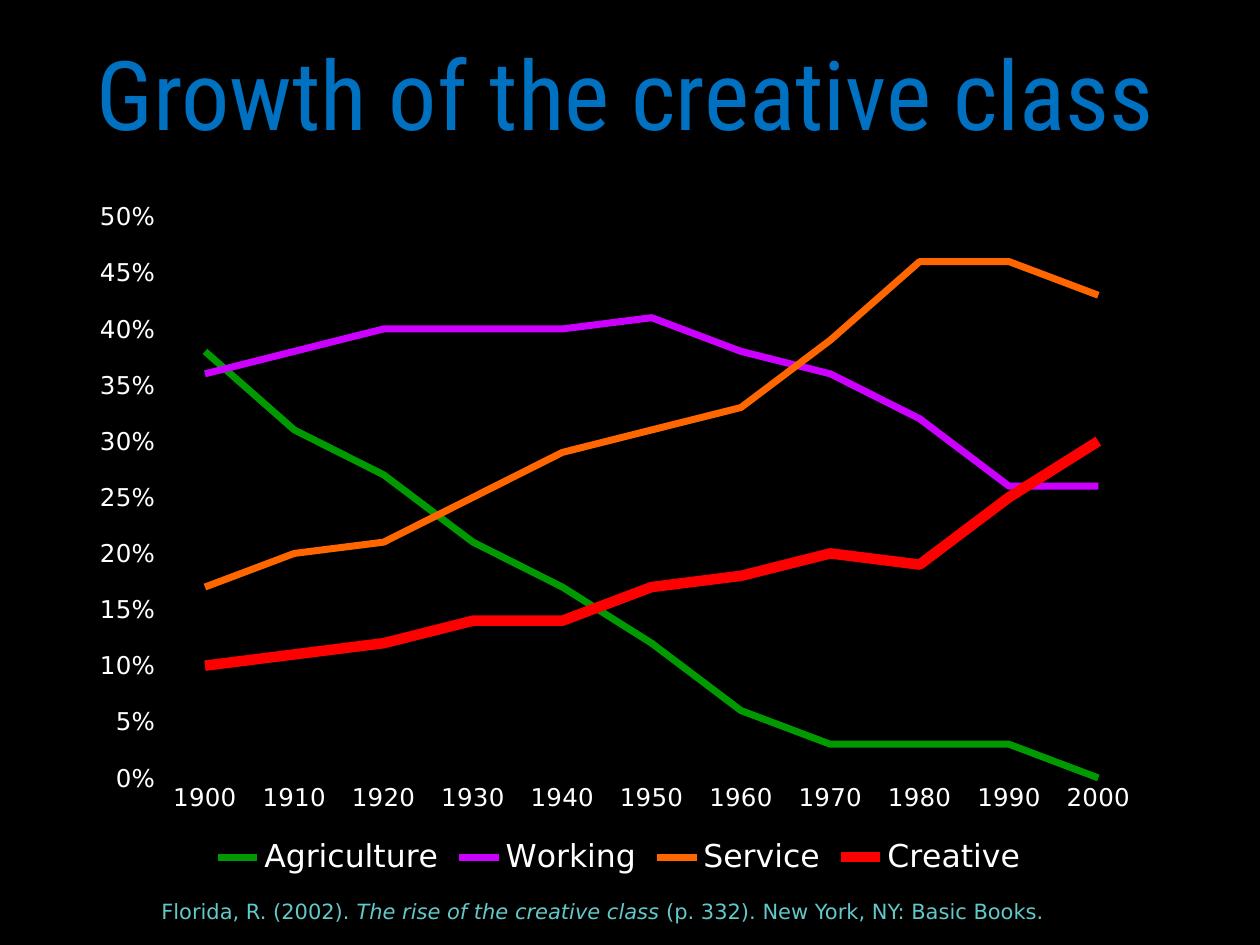
import pptx
import pptx.chart.data
import pptx.dml.color
import pptx.enum.chart
import pptx.enum.text
import pptx.util
from lxml import etree

px = 914400 / 126
enum = pptx.enum.chart


def rgb(code):
    return pptx.dml.color.RGBColor.from_string(code)


def label(box, parts, face, size, color):
    """Add an unwrapped line of text; every second part is italic."""
    shape = slide.shapes.add_textbox(*[round(n * px) for n in box])
    frame = shape.text_frame
    frame.word_wrap = False
    frame.auto_size = pptx.enum.text.MSO_AUTO_SIZE.SHAPE_TO_FIT_TEXT
    para = frame.paragraphs[0]
    for i, part in enumerate(parts):
        run = para.add_run()
        run.text = part
        run.font.name = face
        run.font.size = pptx.util.Pt(size)
        run.font.italic = i % 2 == 1
        run.font.color.rgb = rgb(color)


deck = pptx.Presentation()
deck.slide_width = round(1260 * px)
deck.slide_height = round(945 * px)
slide = deck.slides.add_slide(deck.slide_layouts[6])
slide.background.fill.solid()
slide.background.fill.fore_color.rgb = rgb("000000")

# Share of the workforce in each class: color, line width, values
groups = {
    "Agriculture": ("009900", 4, [0.38, 0.31, 0.27, 0.21, 0.17, 0.12, 0.06, 0.03, 0.03, 0.03, 0]),
    "Working": ("CC00FF", 4, [0.36, 0.38, 0.4, 0.4, 0.4, 0.41, 0.38, 0.36, 0.32, 0.26, 0.26]),
    "Service": ("FF6600", 4, [0.17, 0.2, 0.21, 0.25, 0.29, 0.31, 0.33, 0.39, 0.46, 0.46, 0.43]),
    "Creative": ("FF0000", 6, [0.1, 0.11, 0.12, 0.14, 0.14, 0.17, 0.18, 0.2, 0.19, 0.25, 0.3]),
}
data = pptx.chart.data.CategoryChartData(number_format="0%")
data.categories = [str(year) for year in range(1900, 2001, 10)]
for name, (color, width, shares) in groups.items():
    data.add_series(name, shares)

box = [round(n * px) for n in (73, 189, 1092, 693)]
chart = slide.shapes.add_chart(enum.XL_CHART_TYPE.LINE, *box, data).chart
chart.has_title = False
chart.font.name = "DejaVu Sans"
chart.font.size = pptx.util.Pt(18)
chart.font.color.rgb = rgb("FFFFFF")
chart.has_legend = True
chart.legend.position = enum.XL_LEGEND_POSITION.BOTTOM
chart.legend.include_in_layout = False

plot = chart.plots[0]
plot.vary_by_categories = False
for line in plot.series:
    color, width, shares = groups[line.name]
    line.smooth = False
    line.marker.style = enum.XL_MARKER_STYLE.NONE
    line.format.line.width = pptx.util.Pt(width)
    line.format.line.color.rgb = rgb(color)

for axis in (chart.category_axis, chart.value_axis):
    axis.has_major_gridlines = False
    axis.major_tick_mark = enum.XL_TICK_MARK.NONE
    axis.minor_tick_mark = enum.XL_TICK_MARK.NONE
    axis.format.line.fill.background()
    axis.tick_labels.font.size = pptx.util.Pt(14)
    axis.tick_labels.font.color.rgb = rgb("FFFFFF")
share = chart.value_axis
share.minimum_scale, share.maximum_scale, share.major_unit = 0, 0.5, 0.05
share.tick_labels.number_format = "0%"
share.tick_labels.number_format_is_linked = False

# Fix the inner plot area as fractions of the chart
ns = "{http://schemas.openxmlformats.org/drawingml/2006/chart}"
area = chart.element.find(f".//{ns}plotArea")
for old in area.findall(ns + "layout"):
    area.remove(old)
layout = etree.Element(ns + "layout")
area.insert(0, layout)
manual = etree.SubElement(layout, ns + "manualLayout")
for tag, val in (("layoutTarget", "inner"), ("xMode", "edge"), ("yMode", "edge"),
                 ("x", "0.08"), ("y", "0.04"), ("w", "0.9"), ("h", "0.81")):
    etree.SubElement(manual, ns + tag).set("val", val)

label((84, 28, 1131, 130), ["Growth of the creative class"], "Roboto Condensed", 55, "0070C0")
cite = ["Florida, R. (2002). ", "The rise of the creative class",
        " (p. 332). New York, NY: Basic Books."]
label((149, 892, 934, 38), cite, "DejaVu Sans", 12, "63C8C8")

deck.save("out.pptx")
